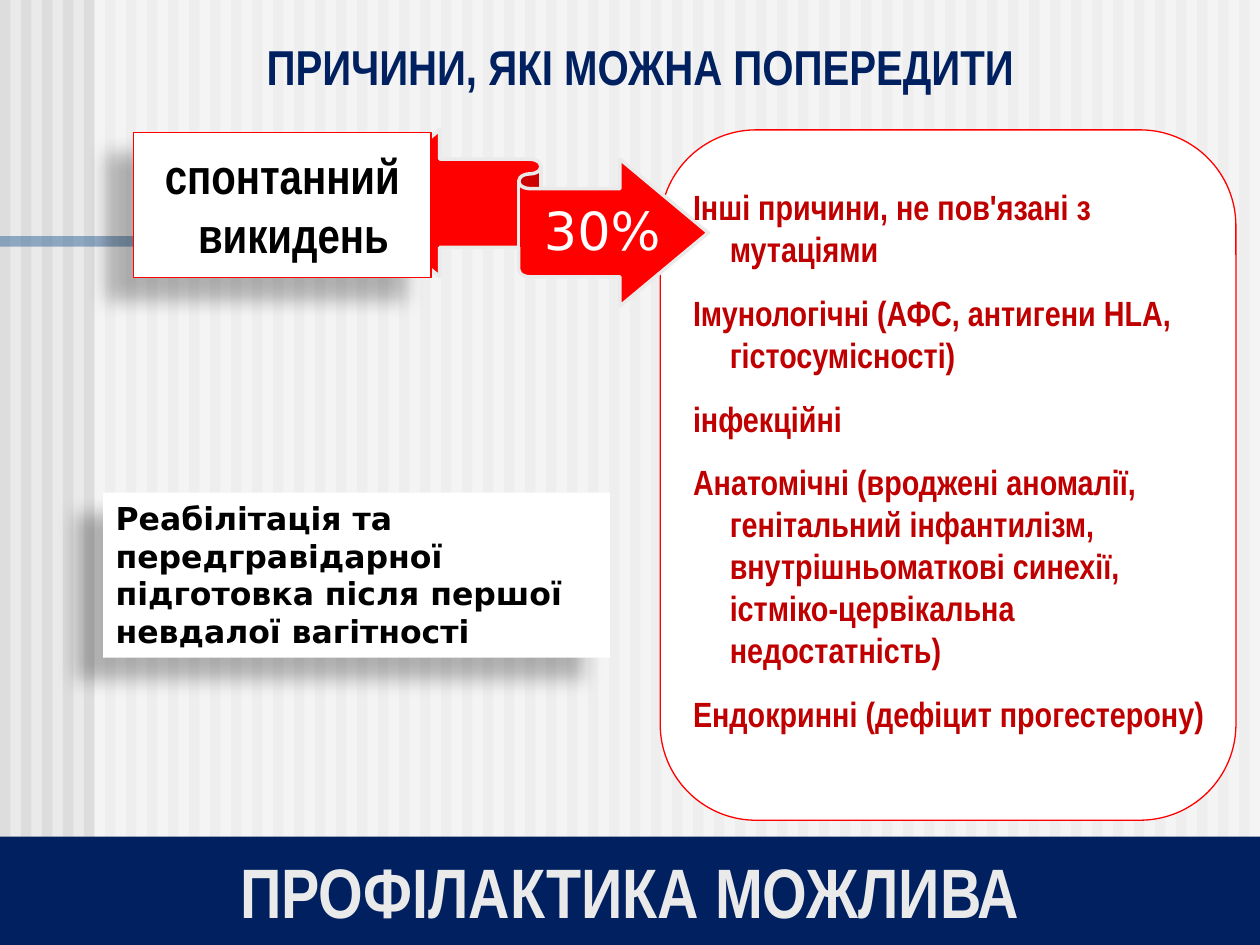
from lxml.etree import SubElement as Sub
from pptx import Presentation
from pptx.dml.color import RGBColor
from pptx.enum.shapes import MSO_SHAPE as Kind
from pptx.enum.text import MSO_ANCHOR as Anchor, PP_ALIGN as Align
from pptx.oxml.ns import qn
from pptx.util import Pt

PALE = RGBColor(0xEA, 0xEA, 0xEA)
GREY = RGBColor(0xDD, 0xDD, 0xDD)
WHITE = RGBColor(0xFF, 0xFF, 0xFF)
BLACK = RGBColor(0, 0, 0)
BLUE = RGBColor(0x33, 0x66, 0x99)
NAVY = RGBColor(0x00, 0x20, 0x60)
RED = RGBColor(0xFF, 0, 0)
DARK = RGBColor(0xC0, 0, 0)
NARROW, SANS = "Arial Narrow", "DejaVu Sans"

deck = Presentation()
deck.slide_width, deck.slide_height = Pt(720), Pt(540)
slide = deck.slides.add_slide(deck.slide_layouts[6])
slide.background.fill.solid()
slide.background.fill.fore_color.rgb = PALE


def draw(kind, spot, fill, line=None, width=0.75, clear=False, shade=False):
    """Add a filled shape, half clear or with a soft shadow if asked."""
    shape = slide.shapes.add_shape(kind, *map(Pt, spot))
    shape.shadow.inherit = False
    shape.fill.solid()
    shape.fill.fore_color.rgb = fill
    if line is None:
        shape.line.fill.background()
    else:
        shape.line.color.rgb = line
        shape.line.width = Pt(width)
    props = shape._element.spPr
    if clear:
        tone = props.find(qn("a:solidFill"))[0]
        Sub(tone, qn("a:alpha"), val="50000")
    if shade:
        cast = Sub(props.find(qn("a:effectLst")), qn("a:outerShdw"),
                   blurRad=str(Pt(11.8)), dist=str(Pt(19.7)),
                   dir=str(141 * 60000), algn="tl", rotWithShape="0")
        tone = Sub(cast, qn("a:srgbClr"), val=str(BLACK))
        Sub(tone, qn("a:alpha"), val="28000")
    return shape


def write(shape, lines, size, font, color, bold=True, align=Align.CENTER,
          anchor=Anchor.MIDDLE, wrap=True, pad=(7.2, 3.6), gap=0, space=None):
    """Fill a shape with one paragraph per line and return them."""
    frame = shape.text_frame
    frame.word_wrap = wrap
    frame.vertical_anchor = anchor
    frame.margin_left = frame.margin_right = Pt(pad[0])
    frame.margin_top = frame.margin_bottom = Pt(pad[1])
    for i, line in enumerate(lines):
        para = frame.add_paragraph() if i else frame.paragraphs[0]
        para.alignment = align
        para.space_before = Pt(gap)
        if space:
            para.line_spacing = space
        run = para.add_run()
        run.text = line
        run.font.size, run.font.name = Pt(size), font
        run.font.bold, run.font.color.rgb = bold, color
    return frame.paragraphs


# Striped backdrop, veil and bar
for i in range(60):
    draw(Kind.RECTANGLE, (12 * i, 0, 6, 540), GREY)
draw(Kind.RECTANGLE, (54, 0, 666, 540), WHITE, clear=True)
draw(Kind.RECTANGLE, (0, 135, 547, 6), BLUE, clear=True)

# Panel and ribbon
draw(Kind.ROUNDED_RECTANGLE, (377.3, 74.2, 329, 394.5), WHITE, RED)
draw(Kind.LEFT_RIGHT_RIBBON, (200.9, 74.2, 203.8, 100.8), RED, PALE, 2)

# Outcome box
case = draw(Kind.RECTANGLE, (76.3, 75.6, 170, 82.8), WHITE, RED, shade=True)
write(case, ["спонтанний", "  викидень"], 28, NARROW, BLACK, wrap=False)

# Footer band
foot = draw(Kind.RECTANGLE, (0, 478, 720, 62), NAVY)
write(foot, ["ПРОФІЛАКТИКА МОЖЛИВА"], 40, NARROW, PALE, wrap=False)

# Share on the ribbon
share = slide.shapes.add_textbox(Pt(301), Pt(108), Pt(86.4), Pt(51))
write(share, ["30%"], 30, SANS, WHITE, bold=False, pad=(0, 8.6), space=0.9)

# Title
title = slide.shapes.add_textbox(Pt(76.3), Pt(15), Pt(579), Pt(41))
write(title, ["ПРИЧИНИ, ЯКІ МОЖНА ПОПЕРЕДИТИ"], 28, NARROW, NAVY,
      anchor=Anchor.TOP, pad=(7.9, 4.3), gap=12.5, space=1.05)

# List of causes with hanging indents
causes = [
    "Інші причини, не пов'язані з мутаціями",
    "Імунологічні (АФС, антигени HLA, гістосумісності)",
    "інфекційні",
    "Анатомічні (вроджені аномалії, генітальний інфантилізм, "
    "внутрішньоматкові синехії, істміко-цервікальна недостатність)",
    "Ендокринні (дефіцит прогестерону)",
]
body = slide.shapes.add_textbox(Pt(388.1), Pt(101.5), Pt(317.5), Pt(327.6))
for para in write(body, causes, 20, NARROW, DARK, align=Align.LEFT,
                  anchor=Anchor.TOP, pad=(7.9, 4.3), gap=12.5):
    hang = para._p.get_or_add_pPr()
    hang.set("marL", str(Pt(21)))
    hang.set("indent", str(Pt(-21)))

# Advice box
note = draw(Kind.RECTANGLE, (59, 281.5, 289.5, 94.3), WHITE, shade=True)
write(note, ["Реабілітація та передгравідарної підготовка після першої "
             "невдалої вагітності"], 18, SANS, BLACK, align=Align.LEFT,
      anchor=Anchor.TOP)

deck.save("out.pptx")
